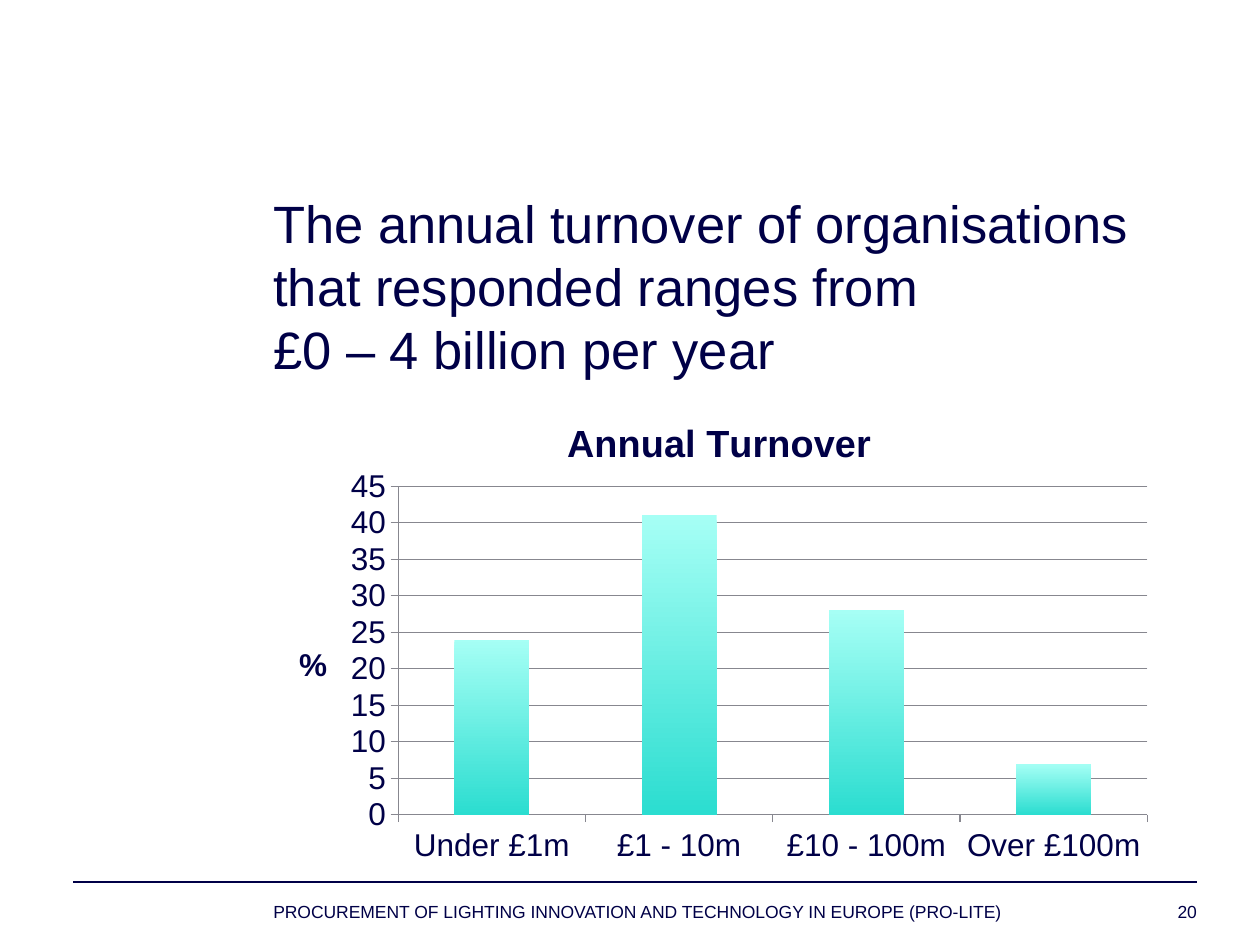
import pptx
import pptx.chart.data
import pptx.dml.color
import pptx.enum.chart
import pptx.enum.shapes
import pptx.enum.text
import pptx.oxml
import pptx.oxml.ns
import pptx.util
from pptx.util import Cm, Pt

NAVY = pptx.dml.color.RGBColor(0x00, 0x00, 0x47)
GREY = pptx.dml.color.RGBColor(0x87, 0x87, 0x8F)
LIGHT_TEAL = pptx.dml.color.RGBColor(0xA6, 0xFF, 0xF5)
TEAL = pptx.dml.color.RGBColor(0x2B, 0xDD, 0xD0)
WHITE = pptx.dml.color.RGBColor(0xFF, 0xFF, 0xFF)
ALIGN = pptx.enum.text.PP_ALIGN


def style_font(font, size, bold=False):
    font.name = "Arial"
    font.size = Pt(size)
    font.bold = bold
    font.color.rgb = NAVY


def fill_text(sp, text, size, align):
    tf = sp.text_frame
    tf.word_wrap = True
    tf.auto_size = pptx.enum.text.MSO_AUTO_SIZE.NONE
    tf.vertical_anchor = pptx.enum.text.MSO_ANCHOR.TOP
    tf.margin_left = tf.margin_right = tf.margin_top = tf.margin_bottom = 0
    tf.text = text
    p = tf.paragraphs[0]
    p.alignment = align
    for r in p.runs:
        style_font(r.font, size)
    return p


prs = pptx.Presentation()
prs.slide_width = Cm(25.4)
prs.slide_height = Cm(19.05)
s = prs.slides.add_slide(prs.slide_layouts[5])
s.background.fill.solid()
s.background.fill.fore_color.rgb = WHITE

left, width = Cm(5.51), Cm(17.98)

line = s.shapes.add_connector(
    pptx.enum.shapes.MSO_CONNECTOR.STRAIGHT, Cm(1.48), Cm(17.78), Cm(24.13), Cm(17.78))
line.line.color.rgb = NAVY
line.line.width = Pt(1)
line._element.spPr.append(pptx.oxml.parse_xml(
    f'<a:effectLst {pptx.oxml.ns.nsdecls("a")}/>'))

title = s.shapes.title
title.left, title.top, title.width, title.height = left, Cm(3.86), width, Cm(1.57)
p = fill_text(
    title,
    "The annual turnover of organisations that responded ranges from\v£0 – 4 billion per year",
    30, ALIGN.LEFT)
p.line_spacing = Pt(36)

data = pptx.chart.data.CategoryChartData()
data.categories = ["Under £1m", "£1 - 10m", "£10 - 100m", "Over £100m"]
data.add_series("Annual Turnover", [24, 41, 28, 7])
chart = s.shapes.add_chart(
    pptx.enum.chart.XL_CHART_TYPE.COLUMN_CLUSTERED,
    left, Cm(7.98), width, Cm(9.6), data).chart
style_font(chart.font, 18)
chart.has_legend = False
chart.has_title = True
chart.chart_title.text_frame.text = "Annual Turnover"
style_font(chart.chart_title.text_frame.paragraphs[0].runs[0].font, 21.6, True)

plot = chart.plots[0]
plot.gap_width = 150
plot.vary_by_categories = False
fill = plot.series[0].format.fill
fill.gradient()
fill.gradient_angle = 270
for stop, color, position in zip(fill.gradient_stops, (LIGHT_TEAL, TEAL), (0, 1)):
    stop.color.rgb = color
    stop.position = position

value_axis = chart.value_axis
value_axis.minimum_scale = 0
value_axis.maximum_scale = 45
value_axis.major_unit = 5
value_axis.has_major_gridlines = True
value_axis.has_title = True
tf = value_axis.axis_title.text_frame
tf.text = "%"
tf._txBody.bodyPr.set("rot", "0")
tf._txBody.bodyPr.set("vert", "horz")
style_font(tf.paragraphs[0].runs[0].font, 18, True)
for axis in (chart.category_axis, value_axis):
    axis.major_tick_mark = pptx.enum.chart.XL_TICK_MARK.OUTSIDE
    style_font(axis.tick_labels.font, 18)
for part in (chart.category_axis, value_axis, value_axis.major_gridlines):
    part.format.line.color.rgb = GREY
    part.format.line.width = Pt(0.75)

plot_area = chart._chartSpace.chart.plotArea
for layout in plot_area.findall(pptx.oxml.ns.qn("c:layout")):
    plot_area.remove(layout)
plot_area.insert(0, pptx.oxml.parse_xml(
    f'<c:layout {pptx.oxml.ns.nsdecls("c")}><c:manualLayout>'
    '<c:layoutTarget val="inner"/><c:xMode val="edge"/><c:yMode val="edge"/>'
    '<c:x val="0.14"/><c:y val="0.19"/><c:w val="0.84"/><c:h val="0.69"/>'
    '</c:manualLayout></c:layout>'))

footers = [
    ("PROCUREMENT OF LIGHTING INNOVATION AND TECHNOLOGY IN EUROPE (PRO-LITE)",
     left, Cm(15.67), ALIGN.LEFT),
    ("20", Cm(21.59), Cm(2.54), ALIGN.RIGHT),
]
for text, x, w, align in footers:
    sp = s.shapes.add_textbox(x, Cm(18.16), w, Cm(0.89))
    fill_text(sp, text, 10, align)

prs.save("out.pptx")
